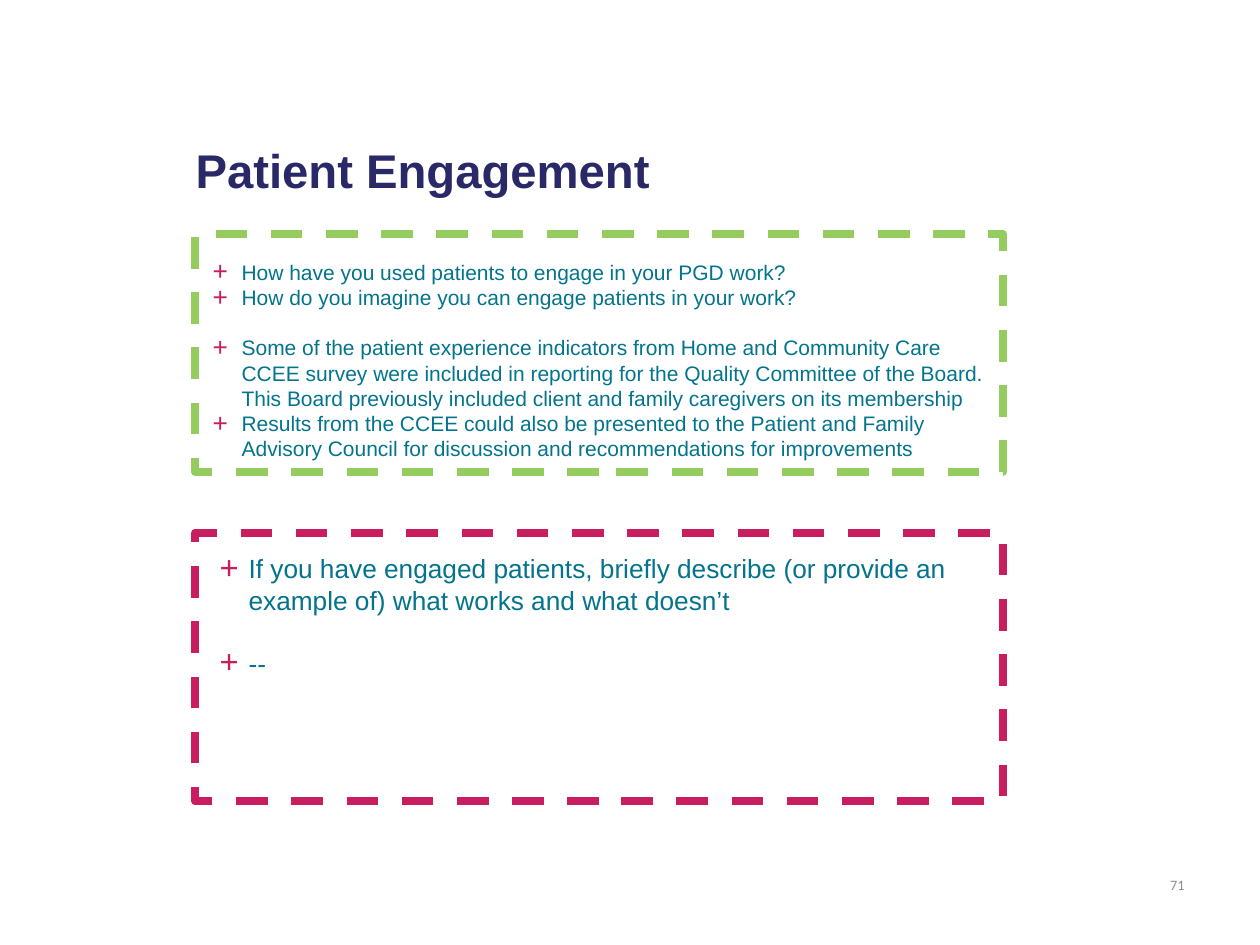
from lxml import etree
from pptx import Presentation
from pptx.dml.color import RGBColor
from pptx.enum.dml import MSO_LINE
from pptx.enum.shapes import MSO_SHAPE
from pptx.enum.text import MSO_ANCHOR, MSO_AUTO_SIZE, PP_ALIGN
from pptx.oxml.ns import qn
from pptx.util import Emu, Pt

DASH = MSO_LINE.DASH
RECT = MSO_SHAPE.RECTANGLE
MIDDLE = MSO_ANCHOR.MIDDLE
NO_FIT = MSO_AUTO_SIZE.NONE
LEFT, RIGHT = PP_ALIGN.LEFT, PP_ALIGN.RIGHT

SCALE = 914400 / 126
INDENT = 29
COLORS = {
    "white": "FFFFFF",
    "navy": "2A2967",
    "teal": "03748C",
    "green": "94CC60",
    "pink": "C81D5F",
    "gray": "8C8C8C",
}
ASKS = [
    "How have you used patients to engage in your PGD work?",
    "How do you imagine you can engage patients in your work?",
    "Some of the patient experience indicators from Home and Community Care "
    "CCEE survey were included in reporting for the Quality Committee of the "
    "Board. This Board previously included client and family caregivers on "
    "its membership",
    "Results from the CCEE could also be presented to the Patient and Family "
    "Advisory Council for discussion and recommendations for improvements",
]
REPLIES = [
    "If you have engaged patients, briefly describe (or provide an example of) "
    "what works and what doesn’t",
    "--",
]


def px(count):
    return Emu(round(count * SCALE))


def color(name):
    return RGBColor.from_string(COLORS[name])


def place(shape, box):
    shape.left, shape.top, shape.width, shape.height = map(px, box)


def style(font, size, tint, name="Arial", bold=False):
    font.size, font.name, font.bold = Pt(size), name, bold
    font.color.rgb = color(tint)


def add_panel(slide, box, tint):
    """Add a dashed frame behind the placeholders."""
    panel = slide.shapes.add_shape(RECT, *map(px, box))
    panel.shadow.inherit = False
    panel.fill.solid()
    panel.fill.fore_color.rgb = color("white")
    panel.line.color.rgb = color(tint)
    panel.line.width = Pt(4.5)
    panel.line.dash_style = DASH
    slide.shapes._spTree.insert(2, panel._element)


def add_bullet(para):
    props = para._p.get_or_add_pPr()
    props.set("marL", str(px(INDENT)))
    props.set("indent", str(-px(INDENT)))
    tint = etree.SubElement(props, qn("a:buClr"))
    etree.SubElement(tint, qn("a:srgbClr"), val=COLORS["pink"])
    etree.SubElement(props, qn("a:buSzPct"), val="125000")
    etree.SubElement(props, qn("a:buFont"), typeface="Arial")
    etree.SubElement(props, qn("a:buChar"), char="+")


def fill_list(shape, box, items, size, split, gap):
    """Write the bullets, with a wider gap before the one at index split."""
    place(shape, box)
    frame = shape.text_frame
    frame.text = "\n".join(items)
    frame.auto_size = NO_FIT
    for i, para in enumerate(frame.paragraphs):
        para.line_spacing = 1.0
        para.space_before = Pt(gap if i == split else 0)
        para.space_after = Pt(0)
        add_bullet(para)
        style(para.runs[0].font, size, "teal")


def set_title(shape, text):
    place(shape, (183, 140, 872, 59))
    frame = shape.text_frame
    frame.text = text
    frame.auto_size = NO_FIT
    frame.vertical_anchor = MIDDLE
    para = frame.paragraphs[0]
    para.alignment = LEFT
    style(para.runs[0].font, 27, "navy", bold=True)


def add_number(slide, text):
    frame = slide.shapes.add_textbox(*map(px, (1126, 860, 71, 50))).text_frame
    frame.text = text
    frame.word_wrap = True
    frame.vertical_anchor = MIDDLE
    para = frame.paragraphs[0]
    para.alignment = RIGHT
    style(para.runs[0].font, 8.2, "gray", "Calibri")


def main():
    deck = Presentation()
    deck.slide_width, deck.slide_height = px(1260), px(945)
    slide = deck.slides.add_slide(deck.slide_layouts.get_by_name("Two Content"))
    title, asks, replies = list(slide.placeholders)[:3]
    set_title(title, "Patient Engagement")
    add_panel(slide, (195, 234, 808, 238), "green")
    fill_list(asks, (200, 253, 803, 217), ASKS, 12, 2, 14.4)
    add_panel(slide, (195, 533, 808, 268), "pink")
    fill_list(replies, (207, 546, 795, 204), REPLIES, 15, 1, 18)
    add_number(slide, "71")
    deck.save("out.pptx")


if __name__ == "__main__":
    main()
